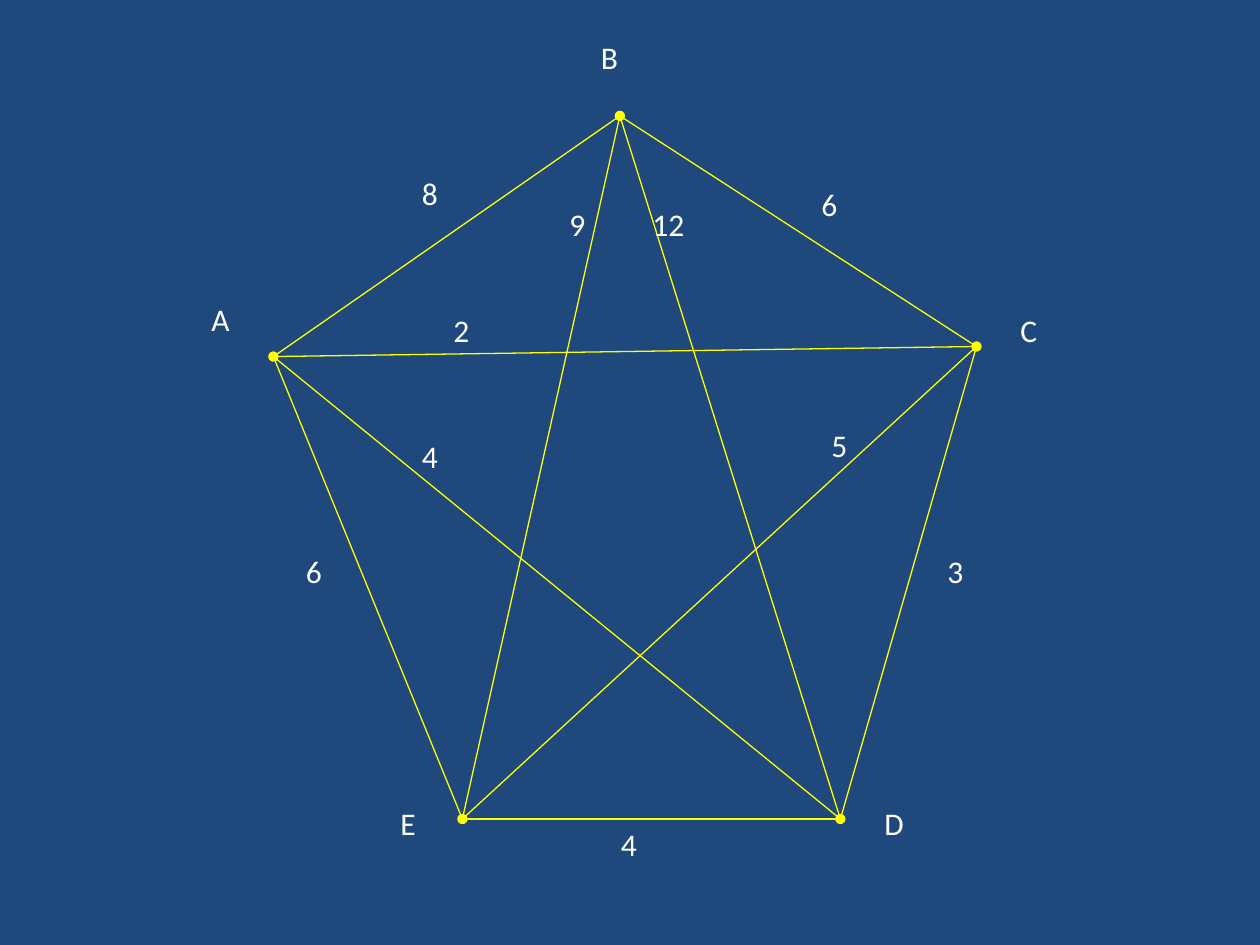
from lxml.etree import SubElement
from pptx import Presentation
from pptx.dml.color import RGBColor
from pptx.enum.shapes import MSO_CONNECTOR
from pptx.enum.text import MSO_AUTO_SIZE
from pptx.oxml.ns import qn
from pptx.util import Inches, Pt

NAVY = RGBColor(0x1F, 0x49, 0x7D)
YELLOW = RGBColor(0xFF, 0xFF, 0x00)
WHITE = RGBColor(0xFF, 0xFF, 0xFF)

VERTICES = {
    "A": (2.17, 2.83),
    "B": (4.92, 0.92),
    "C": (7.75, 2.75),
    "D": (6.67, 6.5),
    "E": (3.67, 6.5),
}
VERTEX_LABELS = [
    ("B", 4.67, 0.25, 0.5),
    ("A", 1.58, 2.33, 0.33),
    ("C", 8, 2.42, 0.58),
    ("D", 6.92, 6.33, 0.58),
    ("E", 3.08, 6.33, 0.5),
]
EDGES = [
    ("A", "B", ("headEnd", "tailEnd"), ("8", 3.25, 1.33, 0.42)),
    ("B", "C", ("tailEnd",), ("6", 6.42, 1.42, 0.58)),
    ("A", "E", ("tailEnd",), ("6", 2.33, 4.33, 0.5)),
    ("E", "D", ("tailEnd",), ("4", 4.83, 6.5, 0.5)),
    ("C", "D", (), ("3", 7.42, 4.33, 0.67)),
    ("A", "C", (), ("2", 3.5, 2.42, 0.42)),
    ("A", "D", (), ("4", 3.25, 3.42, 0.5)),
    ("B", "E", (), ("9", 4.42, 1.58, 0.33)),
    ("C", "E", (), ("5", 6.5, 3.33, 0.5)),
    ("B", "D", (), ("12", 5.08, 1.58, 0.58)),
]
LABEL_HEIGHT = 0.5


def add_edge(slide, start, end, dots):
    points = [Inches(value) for value in VERTICES[start] + VERTICES[end]]
    connector = slide.shapes.add_connector(MSO_CONNECTOR.STRAIGHT, *points)
    connector.line.color.rgb = YELLOW
    connector.line.width = Pt(0.75)
    properties = connector._element.spPr
    for dot in dots:
        SubElement(properties.find(qn("a:ln")), qn(f"a:{dot}"), type="oval")
    SubElement(properties, qn("a:effectLst"))


def add_label(slide, text, left, top, width):
    box = slide.shapes.add_textbox(
        Inches(left), Inches(top), Inches(width), Inches(LABEL_HEIGHT)
    )
    frame = box.text_frame
    frame.word_wrap = True
    frame.auto_size = MSO_AUTO_SIZE.SHAPE_TO_FIT_TEXT
    paragraph = frame.paragraphs[0]
    paragraph.text = text
    paragraph.font.name = "Calibri"
    paragraph.font.size = Pt(18)
    paragraph.font.color.rgb = WHITE


def main():
    presentation = Presentation()
    presentation.slide_width = Inches(10)
    presentation.slide_height = Inches(7.5)
    slide = presentation.slides.add_slide(presentation.slide_layouts[6])
    slide.background.fill.solid()
    slide.background.fill.fore_color.rgb = NAVY

    for start, end, dots, weight in EDGES:
        add_edge(slide, start, end, dots)
        add_label(slide, *weight)
    for label in VERTEX_LABELS:
        add_label(slide, *label)

    presentation.save("out.pptx")


if __name__ == "__main__":
    main()
